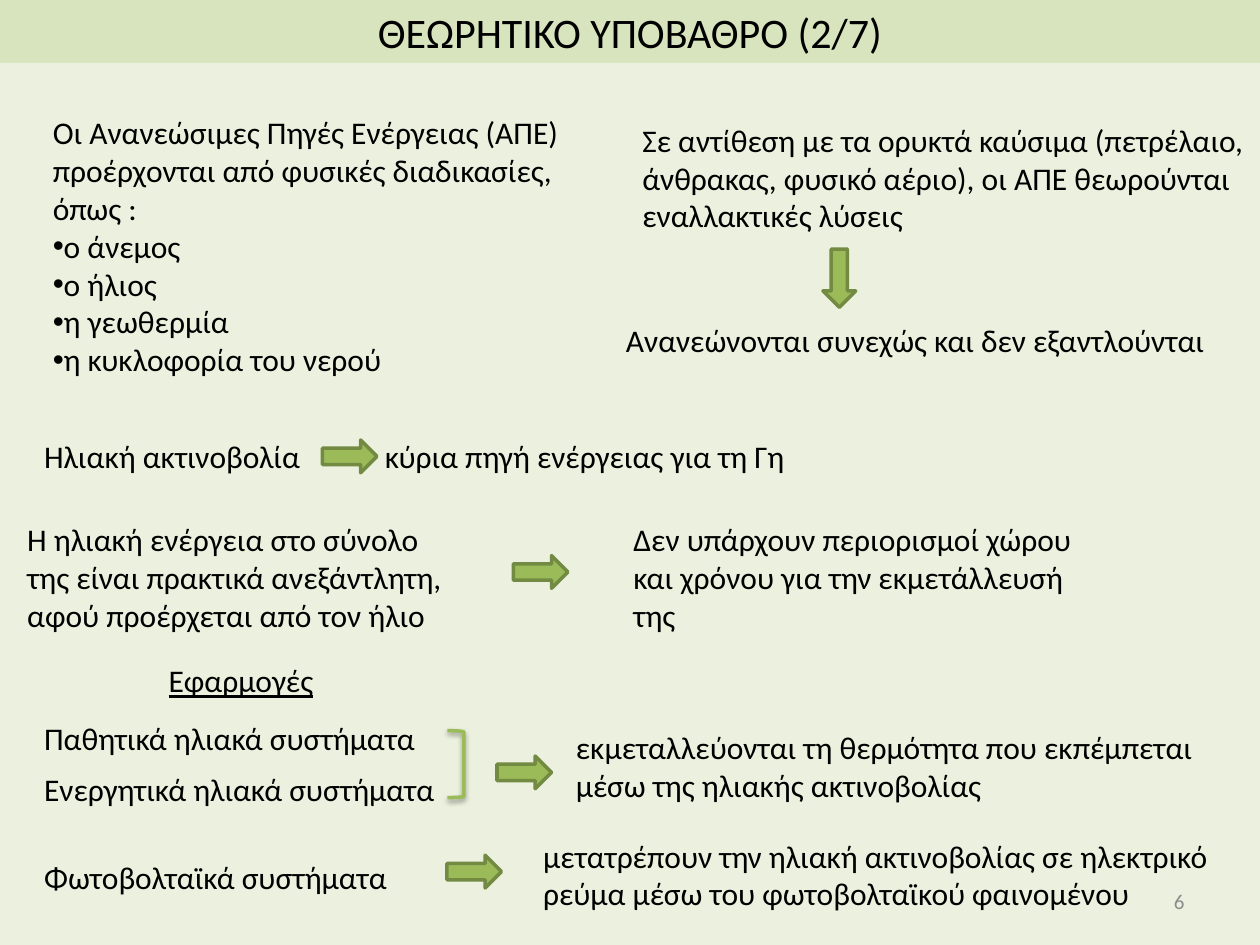
from lxml import etree
from pptx import Presentation
from pptx.dml.color import RGBColor
from pptx.enum.shapes import MSO_SHAPE
from pptx.enum.text import MSO_ANCHOR, MSO_AUTO_SIZE, PP_ALIGN
from pptx.oxml.ns import qn
from pptx.util import Cm, Pt

DOWN, BRACKET = MSO_SHAPE.DOWN_ARROW, MSO_SHAPE.RIGHT_BRACKET
TOP, MIDDLE, BOTTOM = MSO_ANCHOR.TOP, MSO_ANCHOR.MIDDLE, MSO_ANCHOR.BOTTOM
LEFT, CENTER, RIGHT = PP_ALIGN.LEFT, PP_ALIGN.CENTER, PP_ALIGN.RIGHT
FIXED = MSO_AUTO_SIZE.NONE
FONT = "Calibri"
PALE, BAND, GREEN, EDGE = "EBF1DE", "D7E4BD", "9BBB59", "738A42"
ROW = 1.02


def paint(target, color):
    """Fill a shape, line or background with a solid colour."""
    target.fill.solid()
    target.fill.fore_color.rgb = RGBColor.from_string(color)


def node(parent, tag, **attrs):
    """Append a DrawingML element and return it."""
    return etree.SubElement(parent, qn(tag), {k: str(v) for k, v in attrs.items()})


def place(shape, x, y, w, h):
    """Move and size a shape in centimetres."""
    shape.left, shape.top, shape.width, shape.height = Cm(x), Cm(y), Cm(w), Cm(h)


def write(shape, text, size=18, color="000000", align=LEFT, anchor=TOP,
          under=None, wrap=True, mark=None, tab=None):
    """Set the text of a shape; mark bullets every line after the first."""
    frame = shape.text_frame
    frame.auto_size, frame.word_wrap, frame.vertical_anchor = FIXED, wrap, anchor
    for i, line in enumerate(text.split("\n")):
        par = frame.add_paragraph() if i else frame.paragraphs[0]
        par.alignment, par.space_before = align, Pt(0)
        run = par.add_run()
        run.text = line
        font = run.font
        font.name, font.size, font.underline = FONT, Pt(size), under
        font.color.rgb = RGBColor.from_string(color)
        props = par._p.get_or_add_pPr()
        if mark:
            props.set("marL", "0")
            props.set("indent", "0")
            if i:
                node(props, "a:buFont", typeface="Arial")
                node(props, "a:buChar", char=mark)
            else:
                node(props, "a:buNone")
        if tab:
            node(node(props, "a:tabLst"), "a:tab", pos=Cm(tab), algn="l")


def label(slide, text, x, y, w, h=ROW, **form):
    """Add a text box holding formatted text."""
    box = slide.shapes.add_textbox(Cm(x), Cm(y), Cm(w), Cm(h))
    write(box, text, **form)


def arrow(slide, x, y, size=1.1, turn=270):
    """Add a green block arrow centred on a point."""
    wide = 0.66
    shape = slide.shapes.add_shape(DOWN, 0, 0, 0, 0)
    place(shape, x - wide / 2, y - size / 2, wide, size)
    shape.rotation = turn
    paint(shape, GREEN)
    paint(shape.line, EDGE)
    shape.line.width = Pt(2)
    shape.shadow.inherit = False


def bracket(slide, x, y, w, h):
    """Add a closing bracket with a soft shadow."""
    shape = slide.shapes.add_shape(BRACKET, Cm(x), Cm(y), Cm(w), Cm(h))
    shape.fill.background()
    paint(shape.line, GREEN)
    shape.line.width = Pt(2)
    shape.shadow.inherit = False
    effects = shape._element.spPr.find(qn("a:effectLst"))
    shade = node(effects, "a:outerShdw", blurRad=Pt(3.1), dist=Pt(1.6),
                 dir=5400000, rotWithShape=0)
    node(node(shade, "a:srgbClr", val="000000"), "a:alpha", val=38000)


def head(slide, x, y, w, h):
    """Place the title band."""
    title = slide.shapes.title
    place(title, x, y, w, h)
    paint(title, BAND)
    write(title, "ΘΕΩΡΗΤΙΚΟ ΥΠΟΒΑΘΡΟ (2/7)", size=24, align=CENTER, anchor=MIDDLE)


def sources(slide, x, y, w, h):
    """Place the list of renewable sources."""
    body = slide.placeholders[1]
    place(body, x, y, w, h)
    write(body, "Οι Ανανεώσιμες Πηγές Ενέργειας (ΑΠΕ) προέρχονται από φυσικές "
          "διαδικασίες, όπως :\nο άνεμος\nο ήλιος\nη γεωθερμία\n"
          "η κυκλοφορία του νερού", mark="•")


def contrast(slide, x, y, w, h):
    """Place the comparison with fossil fuels."""
    label(slide, "Σε αντίθεση με τα ορυκτά καύσιμα (πετρέλαιο, άνθρακας, φυσικό "
          "αέριο), οι ΑΠΕ θεωρούνται εναλλακτικές λύσεις", x + 0.33, y, w, 2.57)
    arrow(slide, x + 4.55, y + 3.3, size=1.17, turn=0)
    label(slide, "Ανανεώνονται συνεχώς και δεν εξαντλούνται", x, y + h - ROW, w)


def sun(slide, x, y, w, h):
    """Place the line on solar radiation."""
    label(slide, "Ηλιακή ακτινοβολία\tκύρια πηγή ενέργειας για τη Γη",
          x, y, w, h, tab=6.87)
    arrow(slide, x + 6.41, y + h / 2)


def energy(slide, x, y, w, h):
    """Place solar energy and what follows from it."""
    label(slide, "Η ηλιακή ενέργεια στο σύνολο της είναι πρακτικά ανεξάντλητη, "
          "αφού προέρχεται από τον ήλιο", x, y, 9.37, h)
    arrow(slide, x + 10.6, y + 1.17)
    label(slide, "Δεν υπάρχουν περιορισμοί χώρου και χρόνου για την εκμετάλλευσή "
          "της", x + 12.22, y, w - 12.22, h)


def uses(slide, x, y, w, h):
    """Place the applications and their effects."""
    label(slide, "Εφαρμογές", x + 2.51, y, 3.86, under=True)
    systems = ["Παθητικά ηλιακά συστήματα", "Ενεργητικά ηλιακά συστήματα"]
    for i, name in enumerate(systems):
        label(slide, name, x, y + 1.17 + i * ROW, 8.8, wrap=False)
    bracket(slide, x + 8.38, y + 1.52, 0.33, 1.35)
    arrow(slide, x + 9.93, y + 2.36)
    label(slide, "εκμεταλλεύονται τη θερμότητα που εκπέμπεται μέσω της ηλιακής "
          "ακτινοβολίας", x + 10.72, y + 1.35, 13.08, 1.8)
    label(slide, "Φωτοβολταϊκά συστήματα", x, y + 3.17, 7.5, 1.8,
          anchor=BOTTOM, wrap=False)
    arrow(slide, x + 8.92, y + 4.36)
    label(slide, "μετατρέπουν την ηλιακή ακτινοβολίας σε ηλεκτρικό ρεύμα μέσω "
          "του φωτοβολταϊκού φαινομένου", x + 10.06, y + h - 1.8, w - 10.06, 1.8)


def main():
    """Build and save the slide."""
    deck = Presentation()
    deck.slide_width, deck.slide_height = Cm(25.4), Cm(19.05)
    slide = deck.slides.add_slide(deck.slide_layouts[1])
    paint(slide.background, PALE)
    head(slide, 0, 0, 25.4, 1.27)
    sources(slide, 0.81, 2.16, 11.23, 5.64)
    contrast(slide, 12.37, 2.31, 12.7, 5.06)
    sun(slide, 0.64, 8.69, 15.75, ROW)
    energy(slide, 0.3, 10.36, 21.95, 2.57)
    uses(slide, 0.64, 13.21, 25.14, 5.33)
    label(slide, "6", 18.21, 17.65, 5.92, size=12, color="8C8C8C",
          align=RIGHT, anchor=MIDDLE)
    deck.save("out.pptx")


if __name__ == "__main__":
    main()
